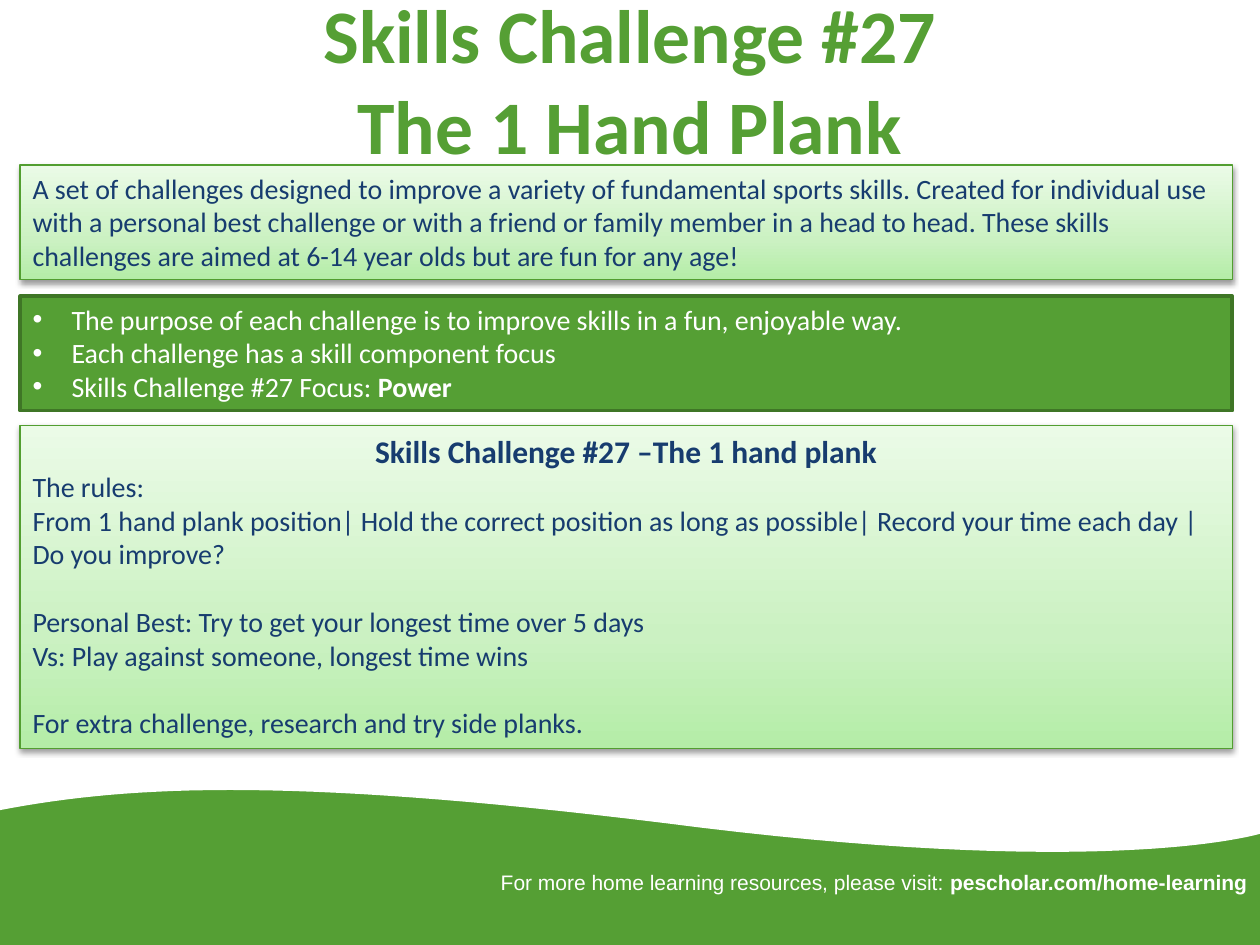
"""Build the Skills Challenge #27 slide."""
from lxml import etree
from pptx import Presentation
from pptx.dml.color import RGBColor
from pptx.enum.shapes import MSO_SHAPE
from pptx.enum.text import MSO_ANCHOR, PP_ALIGN
from pptx.oxml.ns import qn
from pptx.util import Inches, Pt

RECTANGLE = MSO_SHAPE.RECTANGLE
MIDDLE, TOP = MSO_ANCHOR.MIDDLE, MSO_ANCHOR.TOP
LEFT, CENTER, RIGHT = PP_ALIGN.LEFT, PP_ALIGN.CENTER, PP_ALIGN.RIGHT
GREEN, NAVY, WHITE = "559F34", "173C6F", "FFFFFF"
GRADIENT = [(0, "B4EDA7"), (35000, "CBF1C2"), (100000, "EBFBE7")]
BLANK_LINE = 19.5


def color(hex_code):
    return RGBColor.from_string(hex_code)


def write(box, lines, font_color, font_name="Calibri", anchor=TOP):
    """Fill a box with (spans, size, alignment, space before) lines."""
    frame = box.text_frame
    frame.word_wrap = True
    frame.vertical_anchor = anchor
    for index, (spans, size, alignment, gap) in enumerate(lines):
        para = frame.add_paragraph() if index else frame.paragraphs[0]
        para.alignment = alignment
        if gap:
            para.space_before = Pt(gap)
        if box in bulleted:
            properties = para._p.get_or_add_pPr()
            properties.set("marL", str(Inches(0.31)))
            properties.set("indent", str(-Inches(0.31)))
            etree.SubElement(properties, qn("a:buFont"), typeface="Arial")
            etree.SubElement(properties, qn("a:buChar"), char="•")
        for text, bold in spans:
            span = para.add_run()
            span.text = text
            span.font.name = font_name
            span.font.size = Pt(size)
            span.font.bold = bold
            span.font.color.rgb = color(font_color)


deck = Presentation()
deck.slide_width, deck.slide_height = Inches(10), Inches(7.5)
page = deck.slides.add_slide(deck.slide_layouts[6])
shapes = page.shapes

footer_band = shapes.add_shape(RECTANGLE, 0, Inches(6.21), Inches(10), Inches(1.29))
footer_band.fill.solid()
footer_band.fill.fore_color.rgb = color(GREEN)

curves = [
    [(0, 6.43), (1.05, 6.23), (2.37, 6.16), (5.57, 6.57)],
    [(5.57, 6.57), (8.87, 6.97), (10, 6.62), (10.03, 6.61)],
]
steps = 32
wave_points = []
for curve in curves:
    for step in range(1, steps + 1):
        t = step / steps
        weights = [(1 - t) ** 3, 3 * t * (1 - t) ** 2, 3 * t * t * (1 - t), t ** 3]
        wave_points.append(tuple(
            Inches(sum(w * point[axis] for w, point in zip(weights, curve)))
            for axis in (0, 1)))
wave_points += [(Inches(10.03), Inches(5.98)), (0, Inches(5.98))]
builder = shapes.build_freeform(0, Inches(6.43))
builder.add_line_segments(wave_points, close=True)
wave = builder.convert_to_shape()
wave.fill.solid()
wave.fill.fore_color.rgb = color(WHITE)
for shape in (footer_band, wave):
    shape.line.fill.background()
    shape.shadow.inherit = False

title = shapes.add_textbox(Inches(0.5), 0, Inches(9), Inches(1.25))
panels = [
    shapes.add_shape(RECTANGLE, Inches(0.16), Inches(top), Inches(9.62), Inches(height))
    for top, height in ((1.31, 0.91), (2.35, 0.91), (3.38, 2.56))
]
intro, purpose, rules = panels
bulleted = [purpose]
for panel in panels:
    panel.shadow.inherit = False

purpose.fill.solid()
purpose.fill.fore_color.rgb = color(GREEN)
purpose.line.color.rgb = color("3F7626")
purpose.line.width = Pt(2)

for panel in (intro, rules):
    panel.line.color.rgb = color("529E30")
    panel.line.width = Pt(0.75)
    panel.fill.gradient()
    panel.fill.gradient_angle = 90
    properties = panel._element.spPr
    stops = properties.find(qn("a:gradFill")).find(qn("a:gsLst"))
    for stop in list(stops):
        stops.remove(stop)
    for position, hex_code in GRADIENT:
        stop = etree.SubElement(stops, qn("a:gs"), pos=str(position))
        etree.SubElement(stop, qn("a:srgbClr"), val=hex_code)
    shadow = etree.SubElement(
        properties.find(qn("a:effectLst")), qn("a:outerShdw"), blurRad=str(Pt(3.1)),
        dist=str(Pt(1.6)), dir="5400000", rotWithShape="0")
    shade = etree.SubElement(shadow, qn("a:srgbClr"), val="000000")
    etree.SubElement(shade, qn("a:alpha"), val="38000")

title_lines = ["Skills Challenge #27", "The 1 Hand Plank"]
write(title, [([(text, True)], 43.2, CENTER, 0) for text in title_lines],
      GREEN, anchor=MIDDLE)

write(intro, [([(
    "A set of challenges designed to improve a variety of fundamental sports skills. "
    "Created for individual use with a personal best challenge or with a friend or "
    "family member in a head to head. These skills challenges are aimed at 6-14 year "
    "olds but are fun for any age!", False)], 16, LEFT, 0)], NAVY)

write(purpose, [
    ([("The purpose of each challenge is to improve skills in a fun, enjoyable way.",
       False)], 16, LEFT, 0),
    ([("Each challenge has a skill component focus", False)], 16, LEFT, 0),
    ([("Skills Challenge #27 Focus: ", False), ("Power", True)], 16, LEFT, 0),
], WHITE)

rule_lines = [
    ("The rules:", 0),
    ("From 1 hand plank position| Hold the correct position as long as possible| "
     "Record your time each day | Do you improve?", 0),
    ("Personal Best: Try to get your longest time over 5 days", BLANK_LINE),
    ("Vs: Play against someone, longest time wins", 0),
    ("For extra challenge, research and try side planks.", BLANK_LINE),
]
heading = ([("Skills Challenge #27 –The 1 hand plank", True)], 18, CENTER, 0)
write(rules, [heading] + [([(text, False)], 16, LEFT, gap) for text, gap in rule_lines],
      NAVY)

link = shapes.add_textbox(Inches(3.39), Inches(6.85), Inches(6.61), Inches(0.3))
write(link, [([("For more home learning resources, please visit: ", False),
               ("pescholar.com/home-learning", True)], 12, RIGHT, 0)], WHITE, "Arial")

deck.save("out.pptx")
